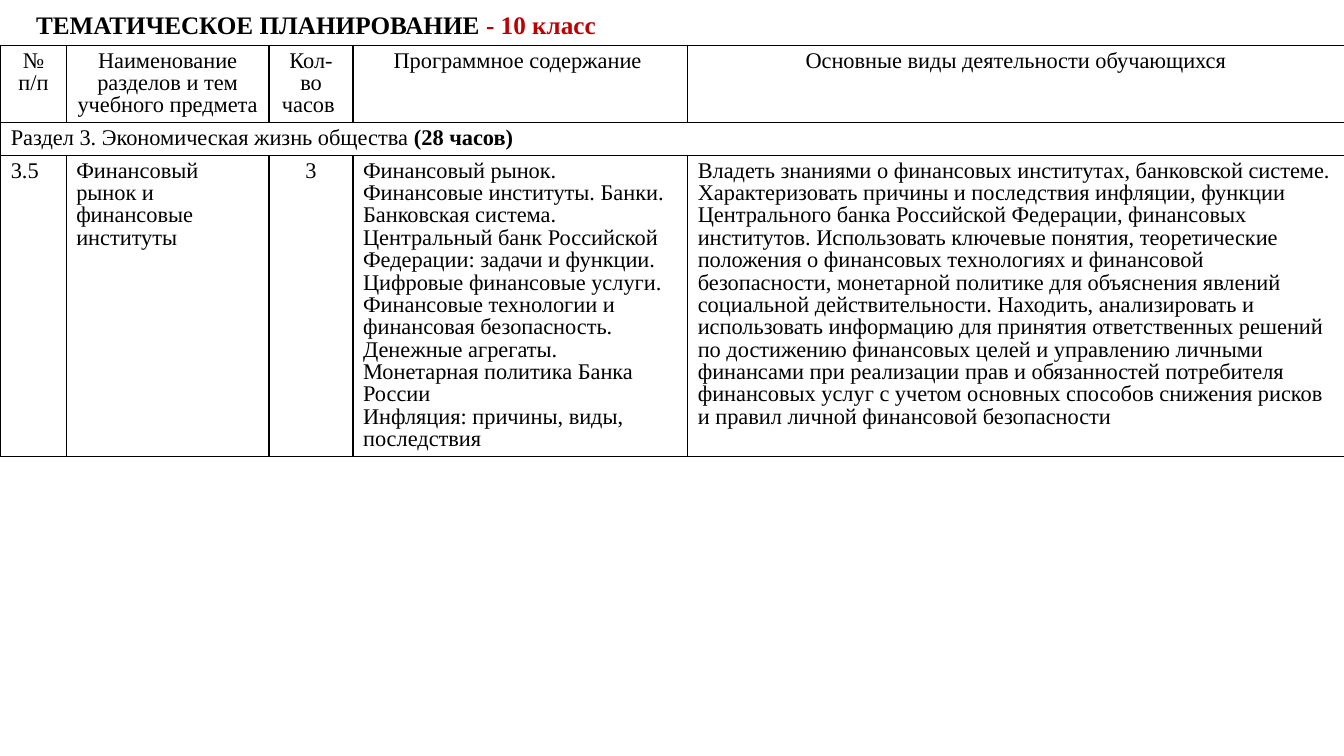
from lxml import etree
from pptx import Presentation
from pptx.dml.color import RGBColor
from pptx.enum.text import MSO_AUTO_SIZE, PP_ALIGN
from pptx.oxml.ns import qn
from pptx.util import Pt

LEFT, CENTER = PP_ALIGN.LEFT, PP_ALIGN.CENTER
GROW = MSO_AUTO_SIZE.SHAPE_TO_FIT_TEXT
BLACK, WHITE, RED = "000000", "FFFFFF", "C00000"


def rgb(value):
    return RGBColor.from_string(value)


class SlideBuilder:
    font = "Times New Roman"
    border_width = Pt(1)

    def __init__(self, slide):
        self.slide = slide

    def fill_text(self, frame, paragraphs, size, align=LEFT, spacing=None):
        for index, runs in enumerate(paragraphs):
            paragraph = frame.add_paragraph() if index else frame.paragraphs[0]
            paragraph.alignment = align
            paragraph.line_spacing = spacing
            for words, bold, color in runs:
                run = paragraph.add_run()
                run.text = words
                style = {"name": self.font, "size": Pt(size), "bold": bold}
                for key, value in style.items():
                    setattr(run.font, key, value)
                run.font.color.rgb = rgb(color)

    def text(self, left, top, width, height, paragraphs, size):
        box = self.slide.shapes.add_textbox(Pt(left), Pt(top), Pt(width), Pt(height))
        layout = {"word_wrap": True, "auto_size": GROW}
        for key, value in layout.items():
            setattr(box.text_frame, key, value)
        self.fill_text(box.text_frame, paragraphs, size)

    def border(self, cell):
        properties = cell._tc.get_or_add_tcPr()
        for side in ("a:lnL", "a:lnR", "a:lnT", "a:lnB"):
            line = etree.SubElement(properties, qn(side), w=str(self.border_width))
            fill = etree.SubElement(line, qn("a:solidFill"))
            etree.SubElement(fill, qn("a:srgbClr"), val=BLACK)

    def table(self, left, top, widths, heights):
        frame = self.slide.shapes.add_table(
            len(heights), len(widths), Pt(left), Pt(top), Pt(sum(widths)), Pt(sum(heights)))
        grid = frame.table
        for key, value in {"first_row": False, "horz_banding": False}.items():
            setattr(grid, key, value)
        for column, width in zip(grid.columns, widths):
            column.width = Pt(width)
        for row, height in zip(grid.rows, heights):
            row.height = Pt(height)
        for cell in grid.iter_cells():
            self.border(cell)
            cell.fill.solid()
            cell.fill.fore_color.rgb = rgb(WHITE)
        return grid


def plain(*paragraphs):
    return [[(words, False, BLACK)] for words in paragraphs]


headings = [
    "№ п/п",
    "Наименование разделов и тем учебного предмета ",
    "Кол-во часов ",
    "Программное содержание ",
    "Основные виды деятельности обучающихся",
]
section = [[
    ("Раздел 3. Экономическая жизнь общества ", False, BLACK),
    ("(28 часов)", True, BLACK),
]]
topic = [
    plain("3.5"),
    plain("Финансовый рынок и финансовые институты "),
    plain("3"),
    plain(
        "Финансовый рынок. Финансовые институты. Банки. Банковская система. "
        "Центральный банк Российской Федерации: задачи и функции. "
        "Цифровые финансовые услуги. Финансовые технологии и финансовая безопасность. "
        "Денежные агрегаты. Монетарная политика Банка России",
        "Инфляция: причины, виды, последствия "),
    plain(
        "Владеть знаниями о финансовых институтах, банковской системе. "
        "Характеризовать причины и последствия инфляции, функции Центрального банка "
        "Российской Федерации, финансовых институтов. Использовать ключевые понятия, "
        "теоретические положения о финансовых технологиях и финансовой безопасности, "
        "монетарной политике для объяснения явлений социальной действительности. "
        "Находить, анализировать и использовать информацию для принятия ответственных "
        "решений по достижению финансовых целей и управлению личными финансами при "
        "реализации прав и обязанностей потребителя финансовых услуг с учетом основных "
        "способов снижения рисков и правил личной финансовой безопасности"),
]
title = [[("ТЕМАТИЧЕСКОЕ ПЛАНИРОВАНИЕ ", True, BLACK), ("- 10 класс", True, RED)]]

deck = Presentation()
deck.slide_width, deck.slide_height = Pt(960), Pt(540)
builder = SlideBuilder(deck.slides.add_slide(deck.slide_layouts[6]))

plan = builder.table(0.5, 32.3, [46.8, 144.9, 60, 239.1, 468.9], [55, 23.4, 215])
plan.cell(1, 0).merge(plan.cell(1, 4))
cell_style = {"size": 16, "spacing": 0.9}
for column, heading in enumerate(headings):
    builder.fill_text(plan.cell(0, column).text_frame, plain(heading), align=CENTER, **cell_style)
builder.fill_text(plan.cell(1, 0).text_frame, section, **cell_style)
for column, content in enumerate(topic):
    align = CENTER if headings[column].startswith("Кол") else LEFT
    builder.fill_text(plan.cell(2, column).text_frame, content, align=align, **cell_style)

builder.text(18.7, 2.9, 479.5, 28.8, title, 18)
deck.save("out.pptx")
